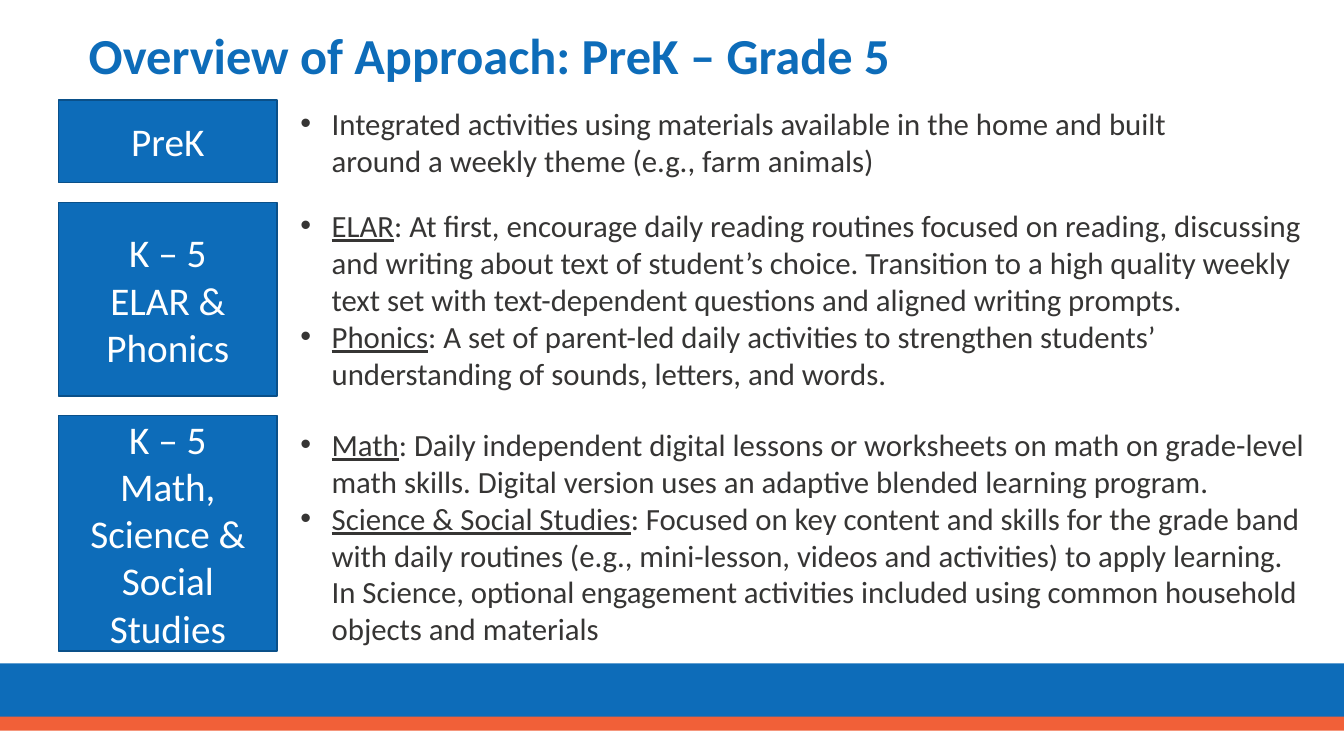
from dataclasses import dataclass

from lxml import etree
from pptx import Presentation
from pptx.dml.color import RGBColor
from pptx.enum.shapes import MSO_SHAPE
from pptx.enum.text import MSO_ANCHOR, MSO_AUTO_SIZE, PP_ALIGN
from pptx.oxml.ns import qn
from pptx.util import Inches, Pt

RECTANGLE = MSO_SHAPE.RECTANGLE
TOP, MIDDLE = MSO_ANCHOR.TOP, MSO_ANCHOR.MIDDLE
NO_AUTOFIT = MSO_AUTO_SIZE.NONE
LEFT, CENTER = PP_ALIGN.LEFT, PP_ALIGN.CENTER
COMPARISON_LAYOUT = 4


@dataclass(frozen=True)
class Theme:
    font: str = "Calibri"
    blue: str = "0D6CB9"
    dark_blue: str = "0A5089"
    orange: str = "F16038"
    white: str = "FFFFFF"
    ink: str = "363534"
    title_size: int = 36
    label_size: int = 28
    body_size: int = 22


@dataclass(frozen=True)
class Area:
    left: float
    top: float
    width: float
    height: float


@dataclass(frozen=True)
class Bullet:
    text: str
    subject: str = ""


@dataclass(frozen=True)
class Band:
    label: list[str]
    label_area: Area
    bullets: list[Bullet]
    bullets_area: Area


THEME = Theme()
SLIDE_WIDTH, SLIDE_HEIGHT = 13.33, 7.5
LABEL_LEFT, LABEL_WIDTH = 0.58, 2.17
BULLETS_LEFT, BULLETS_WIDTH = 2.88, 10.21
BULLET_INDENT = 0.31

FOOTER_BARS = [
    (Area(0, 6.58, SLIDE_WIDTH, 0.58), THEME.blue),
    (Area(0, 7.11, SLIDE_WIDTH, 0.14), THEME.orange),
]

BANDS = [
    Band(
        ["PreK"],
        Area(LABEL_LEFT, 0.99, LABEL_WIDTH, 0.82),
        [Bullet("Integrated activities using materials available in the home and "
                "built around a weekly theme (e.g., farm animals)")],
        Area(BULLETS_LEFT, 0.99, 9.74, 0.84),
    ),
    Band(
        ["K – 5", "ELAR & Phonics"],
        Area(LABEL_LEFT, 2.01, LABEL_WIDTH, 1.92),
        [
            Bullet(": At first, encourage daily reading routines focused on reading, "
                   "discussing and writing about text of student’s choice. Transition "
                   "to a high quality weekly text set with text-dependent questions "
                   "and aligned writing prompts.", "ELAR"),
            Bullet(": A set of parent-led daily activities to strengthen students’ "
                   "understanding of sounds, letters, and words.", "Phonics"),
        ],
        Area(BULLETS_LEFT, 2, BULLETS_WIDTH, 1.95),
    ),
    Band(
        ["K – 5", "Math, Science & Social Studies"],
        Area(LABEL_LEFT, 4.12, LABEL_WIDTH, 2.34),
        [
            Bullet(": Daily independent digital lessons or worksheets on math on "
                   "grade-level math skills. Digital version uses an adaptive blended "
                   "learning program.", "Math"),
            Bullet(": Focused on key content and skills for the grade band with daily "
                   "routines (e.g., mini-lesson, videos and activities) to apply "
                   "learning. In Science, optional engagement activities included "
                   "using common household objects and materials",
                   "Science & Social Studies"),
        ],
        Area(BULLETS_LEFT, 4.17, BULLETS_WIDTH, 2.32),
    ),
]


def place(shape, area: Area) -> None:
    shape.left, shape.top = Inches(area.left), Inches(area.top)
    shape.width, shape.height = Inches(area.width), Inches(area.height)


def set_frame(frame, anchor) -> None:
    frame.word_wrap = True
    frame.auto_size = NO_AUTOFIT
    frame.vertical_anchor = anchor


def set_font(paragraph, size: int, color: str, bold: bool = False) -> None:
    font = paragraph.font
    font.name, font.size, font.bold = THEME.font, Pt(size), bold
    font.color.rgb = RGBColor.from_string(color)


def add_rectangle(slide, area: Area, fill: str):
    box = slide.shapes.add_shape(
        RECTANGLE, Inches(area.left), Inches(area.top),
        Inches(area.width), Inches(area.height))
    box.shadow.inherit = False
    box.fill.solid()
    box.fill.fore_color.rgb = RGBColor.from_string(fill)
    box.line.fill.background()
    return box


def add_label(slide, band: Band) -> None:
    box = add_rectangle(slide, band.label_area, THEME.blue)
    box.line.color.rgb = RGBColor.from_string(THEME.dark_blue)
    box.line.width = Pt(1)
    frame = box.text_frame
    set_frame(frame, MIDDLE)
    frame.text = "\n".join(band.label)
    for paragraph in frame.paragraphs:
        paragraph.alignment = CENTER
        set_font(paragraph, THEME.label_size, THEME.white)


def set_bullet(paragraph) -> None:
    """Give the paragraph a round bullet with a hanging indent."""
    properties = paragraph._p.get_or_add_pPr()
    properties.set("marL", str(Inches(BULLET_INDENT)))
    properties.set("indent", str(-Inches(BULLET_INDENT)))
    etree.SubElement(properties, qn("a:buFont")).set("typeface", "Arial")
    etree.SubElement(properties, qn("a:buChar")).set("char", "•")


def fill_bullets(body, band: Band) -> None:
    place(body, band.bullets_area)
    frame = body.text_frame
    set_frame(frame, TOP)
    for index, bullet in enumerate(band.bullets):
        paragraph = frame.add_paragraph() if index else frame.paragraphs[0]
        paragraph.space_before = Pt(0)
        set_bullet(paragraph)
        set_font(paragraph, THEME.body_size, THEME.ink)
        if bullet.subject:
            span = paragraph.add_run()
            span.text = bullet.subject
            span.font.underline = True
        paragraph.add_run().text = bullet.text


def fill_title(title, text: str) -> None:
    place(title, Area(0.78, 0.17, 12.16, 0.82))
    set_frame(title.text_frame, MIDDLE)
    title.text_frame.text = text
    paragraph = title.text_frame.paragraphs[0]
    paragraph.alignment = LEFT
    paragraph.line_spacing = 0.9
    set_font(paragraph, THEME.title_size, THEME.blue, bold=True)


def main() -> None:
    deck = Presentation()
    deck.slide_width, deck.slide_height = Inches(SLIDE_WIDTH), Inches(SLIDE_HEIGHT)
    slide = deck.slides.add_slide(deck.slide_layouts[COMPARISON_LAYOUT])
    title, *bodies = slide.placeholders
    for area, color in FOOTER_BARS:
        add_rectangle(slide, area, color)
    fill_title(title, "Overview of Approach: PreK – Grade 5")
    for body, band in zip(bodies, BANDS):
        fill_bullets(body, band)
        add_label(slide, band)
    for unused in bodies[len(BANDS):]:
        unused.element.getparent().remove(unused.element)
    deck.save("out.pptx")


if __name__ == "__main__":
    main()
